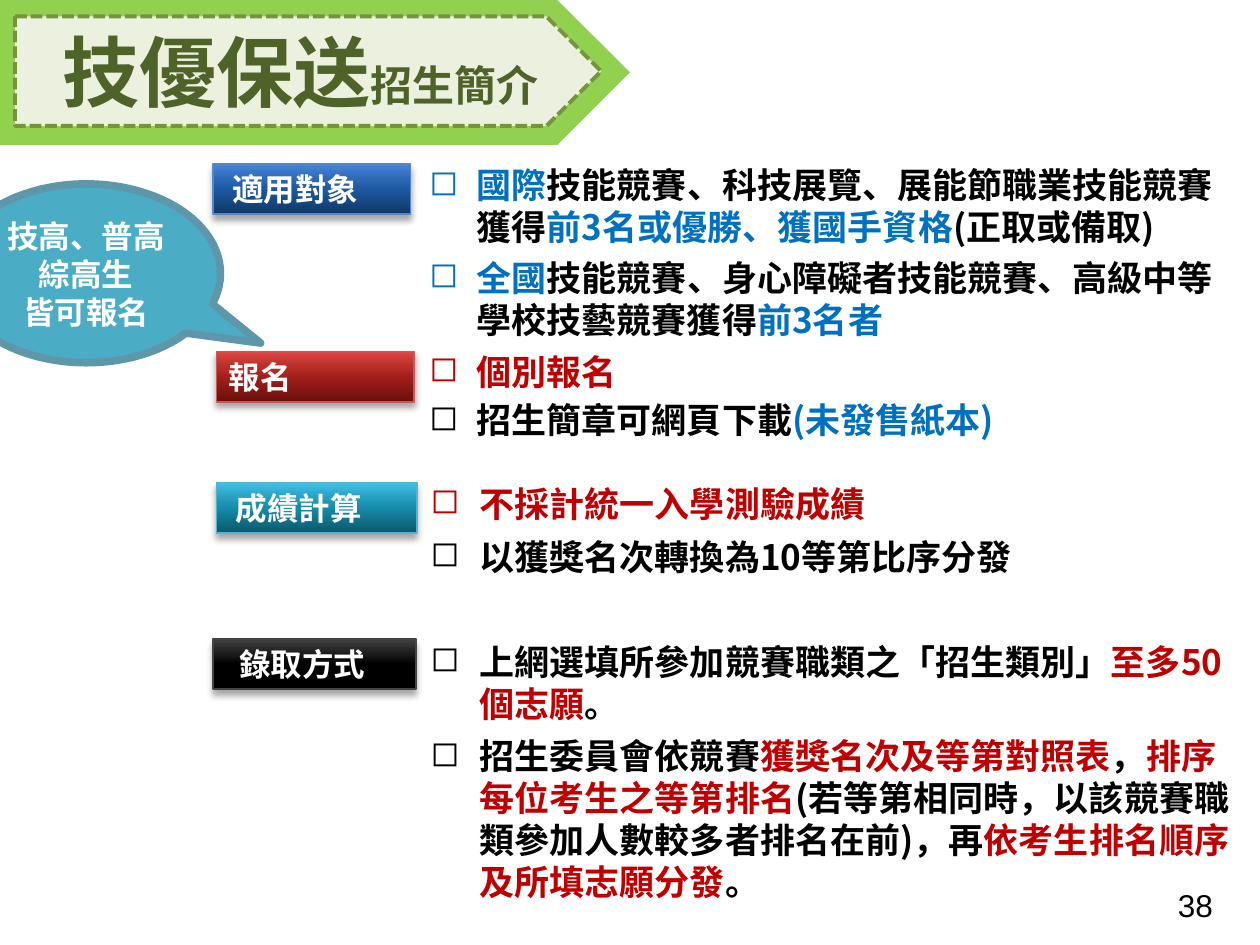
from lxml import etree
from pptx import Presentation
from pptx.dml.color import RGBColor
from pptx.enum import dml, shapes, text
from pptx.oxml import parse_xml
from pptx.oxml.ns import nsdecls, qn
from pptx.util import Pt

BLACK = RGBColor(0x00, 0x00, 0x00)
WHITE = RGBColor(0xFF, 0xFF, 0xFF)
BLUE = RGBColor(0x00, 0x70, 0xC0)
RED = RGBColor(0xC0, 0x00, 0x00)
TEAL = RGBColor(0x4B, 0xAC, 0xC6)
TEAL_EDGE = RGBColor(0x5F, 0x97, 0xAA)
LIME = RGBColor(0x92, 0xD0, 0x50)
CREAM = RGBColor(0xEB, 0xF1, 0xDE)
OLIVE = RGBColor(0x77, 0x93, 0x3C)
DARK_OLIVE = RGBColor(0x4F, 0x62, 0x28)

CJK = "Noto Sans CJK SC"
MONO = "Noto Sans Mono"
STOPS = (0, 50, 70, 100)

# Each paragraph: space before, then its coloured spans.
ENTRY = [
    (2, [("國際", BLUE), ("技能競賽、科技展覽、展能節職業技能競賽獲得", BLACK),
         ("前3名或優勝、獲國手資格", BLUE), ("(正取或備取)", BLACK)]),
    (4.8, [("全國", BLUE), ("技能競賽、身心障礙者技能競賽、高級中等學校技藝競賽獲得", BLACK),
           ("前3名者", BLUE)]),
    (6, [("個別報名", RED)]),
    (3.6, [("招生簡章可網頁下載", BLACK), ("(未發售紙本)", BLUE)]),
]
SELECTION = [
    (2, [("不採計統一入學測驗成績", RED)]),
    (6, [("以獲獎名次轉換為10等第比序分發", BLACK)]),
    (36, [("上網選填所參加競賽職類之「招生類別」", BLACK), ("至多50個志願", RED), ("。", BLACK)]),
    (6, [("招生委員會依競賽", BLACK), ("獲獎名次及等第對照表", RED), ("，", BLACK),
         ("排序每位考生之等第排名", RED),
         ("(若等第相同時，以該競賽職類參加人數較多者排名在前)，再", BLACK),
         ("依考生排名順序及所填志願分發", RED), ("。", BLACK)]),
]
# Each label: text, box, left inset, edge colour, gradient from bottom to top.
LABELS = [
    ("成績計算", (123.8, 275.8, 114.5, 28.8), 11, "54B3CF",
     ("0B586C", "178BAA", "279FC0", "41C1E6")),
    ("報名", (123.8, 200.9, 113, 28.8), 7.2, "C95956",
     ("68100E", "A41E1A", "B92E2A", "DF4845")),
    ("適用對象", (121.7, 93.6, 113, 28.8), 11, "5887C6",
     ("0F3766", "1D59A1", "2D6AB6", "4786DB")),
    ("錄取方式", (121.7, 365, 115.9, 28.8), 15, "444444",
     ("000000", "000000", "1D1D1D", "424242")),
]


def style(span, size, color, bold=True, latin=CJK, asian=CJK):
    font = span.font
    font.size, font.bold, font.name = Pt(size), bold, latin
    font.color.rgb = color
    latin_node = span._r.get_or_add_rPr().find(qn("a:latin"))
    latin_node.addnext(parse_xml(f'<a:ea {nsdecls("a")} typeface="{asian}"/>'))


def add_span(para, words, *args, **kwargs):
    span = para.add_run()
    span.text = words
    style(span, *args, **kwargs)


def add_box(page, box):
    frame = page.shapes.add_textbox(*map(Pt, box)).text_frame
    frame.word_wrap = True
    return frame


def add_figure(page, kind, box, fill=None, edge=None, width=1):
    figure = page.shapes.add_shape(kind, *map(Pt, box))
    figure.shadow.inherit = False
    if fill is not None:
        figure.fill.solid()
        figure.fill.fore_color.rgb = fill
    if edge is None:
        figure.line.fill.background()
    else:
        figure.line.color.rgb = edge
        figure.line.width = Pt(width)
    return figure


def add_bullets(page, box, indent, entries):
    frame = add_box(page, box)
    for index, (before, spans) in enumerate(entries):
        para = frame.add_paragraph() if index else frame.paragraphs[0]
        para.space_before, para.line_spacing = Pt(before), Pt(24)
        props = para._p.get_or_add_pPr()
        props.set("marL", str(Pt(indent)))
        props.set("indent", str(-Pt(indent)))
        etree.SubElement(props, qn("a:buChar")).set("char", "◻")
        for words, color in spans:
            add_span(para, words, 20, color)


def add_label(page, words, box, inset, edge, gradient):
    """A shaded bar with a soft shadow below it."""
    label = add_figure(page, shapes.MSO_SHAPE.RECTANGLE, box, edge=RGBColor.from_string(edge))
    label.fill.gradient()
    label.fill.gradient_angle = 90
    props = label._element.spPr
    stops = props.find(qn("a:gradFill")).find(qn("a:gsLst"))
    for old in list(stops):
        stops.remove(old)
    for place, color in zip(STOPS, gradient):
        stops.append(parse_xml(
            f'<a:gs {nsdecls("a")} pos="{place * 1000}"><a:srgbClr val="{color}"/></a:gs>'))
    props.find(qn("a:effectLst")).append(parse_xml(
        f'<a:outerShdw {nsdecls("a")} blurRad="{Pt(4)}" dist="{Pt(3)}" dir="5400000" '
        'rotWithShape="0"><a:srgbClr val="000000"><a:alpha val="35000"/></a:srgbClr>'
        '</a:outerShdw>'))
    frame = label.text_frame
    frame.word_wrap = False
    frame.margin_left = Pt(inset)
    frame.vertical_anchor = text.MSO_ANCHOR.MIDDLE
    para = frame.paragraphs[0]
    para.alignment = text.PP_ALIGN.LEFT
    add_span(para, words, 18, WHITE)


def add_callout(page, box):
    callout = add_figure(page, shapes.MSO_SHAPE.OVAL_CALLOUT, box, TEAL, TEAL_EDGE, 4.33)
    callout.adjustments[0], callout.adjustments[1] = 0.65, 0.39
    frame = callout.text_frame
    frame.word_wrap = False
    frame.vertical_anchor = text.MSO_ANCHOR.MIDDLE
    frame.text = "技高、普高\n綜高生\v皆可報名"
    for para in frame.paragraphs:
        para.alignment = text.PP_ALIGN.CENTER
        para.line_spacing = Pt(21.7)
        for span in para.runs:
            style(span, 18, WHITE)


def add_banner(page, box):
    left, top, width, height = box
    add_figure(page, shapes.MSO_SHAPE.PENTAGON, box, LIME)
    inner = (left + 11.5, top + 9.4, width - 28, height - 20.2)
    plate = add_figure(page, shapes.MSO_SHAPE.PENTAGON, inner, CREAM, OLIVE, 2.25)
    plate.line.dash_style = dml.MSO_LINE.SQUARE_DOT
    frame = plate.text_frame
    frame.word_wrap = False
    frame.margin_left = Pt(27)
    frame.vertical_anchor = text.MSO_ANCHOR.MIDDLE
    para = frame.paragraphs[0]
    para.alignment = text.PP_ALIGN.LEFT
    for words, size in (("技優保送", 44), ("招生簡介", 24)):
        add_span(para, words, size, DARK_OLIVE, latin=MONO)


def add_page_number(page, box, number):
    para = add_box(page, box).paragraphs[0]
    add_span(para, number, 18, BLACK, bold=False, latin="Arial", asian="Arial")


def main():
    deck = Presentation()
    deck.slide_width, deck.slide_height = Pt(720), Pt(540)
    page = deck.slides.add_slide(deck.slide_layouts[6])
    add_page_number(page, (666, 502.6, 45.4, 28.8), "38")
    add_bullets(page, (238.3, 90, 468, 276.5), 27, ENTRY)
    add_callout(page, (-27.4, 105.1, 153.4, 102.2))
    for label in LABELS:
        add_label(page, *label)
    add_bullets(page, (239, 272.2, 476.6, 258.5), 28, SELECTION)
    add_banner(page, (-2.9, 0, 362.9, 82.8))
    deck.save("out.pptx")


if __name__ == "__main__":
    main()
